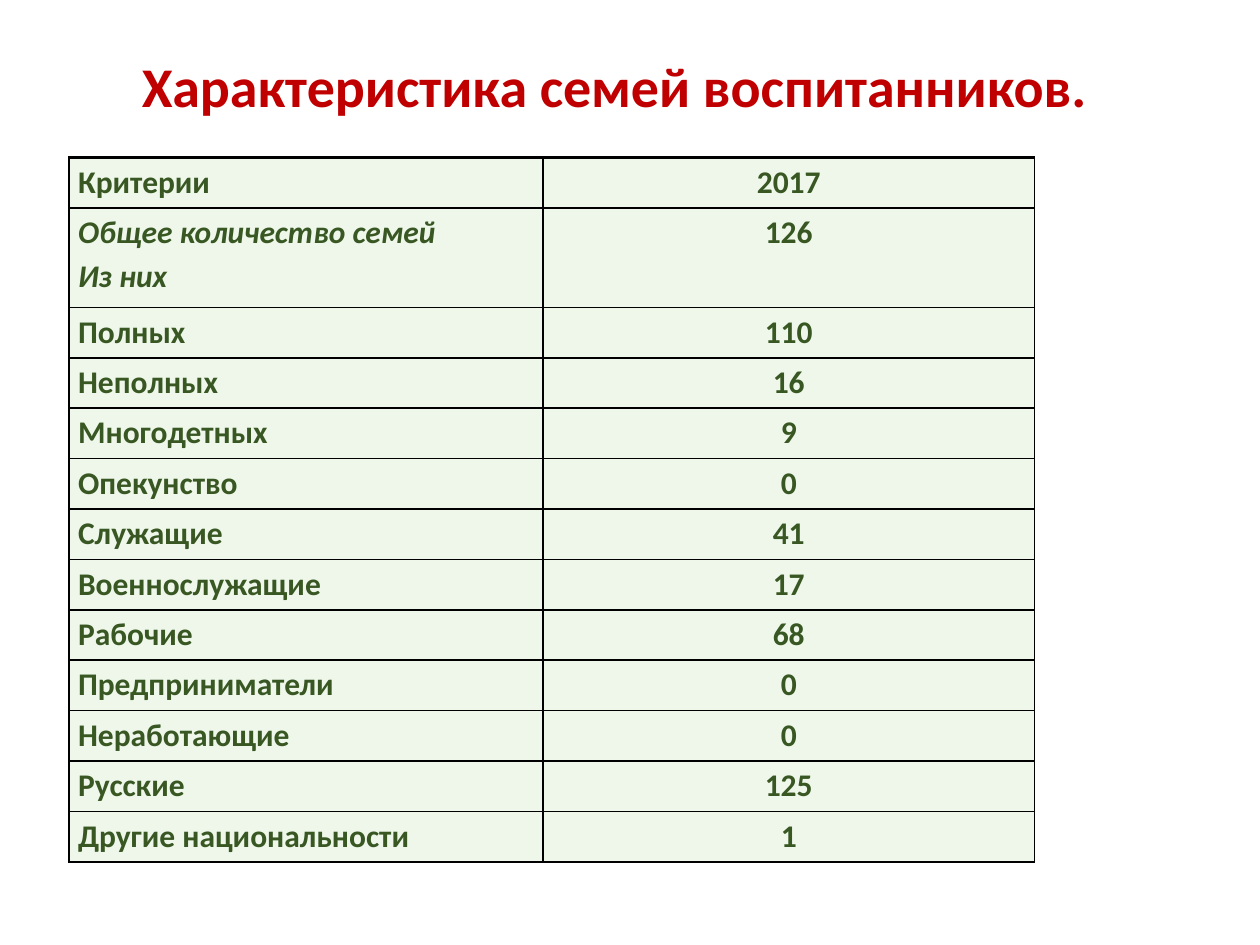
from typing import NamedTuple

from lxml.etree import SubElement
from pptx import Presentation
from pptx.dml.color import RGBColor
from pptx.enum.text import MSO_ANCHOR, MSO_AUTO_SIZE, PP_ALIGN
from pptx.oxml.ns import qn
from pptx.util import Inches, Pt


class Row(NamedTuple):
    label: str
    value: str
    height: float = 0.4
    italic: bool = False


ROWS = [
    Row("Критерии", "2017"),
    Row("Общее количество семей\nИз них", "126", 0.79, True),
    Row("Полных", "110"),
    Row("Неполных", "16"),
    Row("Многодетных", "9"),
    Row("Опекунство", "0"),
    Row("Служащие", "41"),
    Row("Военнослужащие", "17"),
    Row("Рабочие", "68"),
    Row("Предприниматели", "0"),
    Row("Неработающие", "0"),
    Row("Русские", "125"),
    Row("Другие национальности", "1"),
]
WIDTHS = [3.76, 3.9]
THICK, THIN = 1.5, 1
# Horizontal lines, counted from the top, that are thick
HEAVY = {0, 1, 6, len(ROWS)}
GREEN, PALE, RED, BLACK = "385723", "EEF7E9", "C00000", "000000"
CELL = {
    "margin_left": Inches(0.07),
    "margin_right": Inches(0.07),
    "margin_top": 0,
    "margin_bottom": 0,
    "vertical_anchor": MSO_ANCHOR.TOP,
}


def paint(target, color: str) -> None:
    target.rgb = RGBColor.from_string(color)


def apply(target, values: dict) -> None:
    for name, value in values.items():
        setattr(target, name, value)


def style(para, size: float, color: str, align, italic: bool = False) -> None:
    para.alignment = align
    for run in para.runs:
        apply(run.font, {"name": "Calibri", "size": Pt(size),
                         "bold": True, "italic": italic})
        paint(run.font.color, color)


def edge(cell, side: str, width: float) -> None:
    """Draw one cell border; side is L, R, T or B."""
    props = cell._tc.get_or_add_tcPr()
    line = SubElement(props, qn(f"a:ln{side}"), w=str(Pt(width)))
    fill = SubElement(line, qn("a:solidFill"))
    SubElement(fill, qn("a:srgbClr"), val=BLACK)


def weight(line: int) -> float:
    return THICK if line in HEAVY else THIN


def fill_cell(cell, text: str, row: int, col: int, italic: bool) -> None:
    apply(cell, CELL)
    right = THIN if col else THICK
    for side, width in {"L": THICK, "R": right, "T": weight(row),
                        "B": weight(row + 1)}.items():
        edge(cell, side, width)
    cell.fill.solid()
    paint(cell.fill.fore_color, PALE)
    cell.text = text
    for para in cell.text_frame.paragraphs:
        para.line_spacing = 1.15
        style(para, 18, GREEN, PP_ALIGN.CENTER if col else PP_ALIGN.LEFT, italic)


def add_title(slide, text: str) -> None:
    title = slide.shapes.title
    apply(title, {"left": Inches(0.43), "top": Inches(0.36),
                  "width": Inches(8.9), "height": Inches(0.64)})
    frame = title.text_frame
    frame.text = text
    apply(frame, {"word_wrap": True, "vertical_anchor": MSO_ANCHOR.TOP,
                  "auto_size": MSO_AUTO_SIZE.SHAPE_TO_FIT_TEXT})
    style(frame.paragraphs[0], 32, RED, PP_ALIGN.CENTER)


def add_grid(slide, rows: list[Row]) -> None:
    table = slide.shapes.add_table(
        len(rows), len(WIDTHS), Inches(0.55), Inches(1.25),
        Inches(sum(WIDTHS)), Inches(sum(row.height for row in rows))).table
    apply(table, {"first_row": False, "horz_banding": False})
    for col, width in enumerate(WIDTHS):
        table.columns[col].width = Inches(width)
    for num, row in enumerate(rows):
        table.rows[num].height = Inches(row.height)
        fill_cell(table.cell(num, 0), row.label, num, 0, row.italic)
        fill_cell(table.cell(num, 1), row.value, num, 1, False)


def main() -> None:
    deck = Presentation()
    apply(deck, {"slide_width": Inches(10), "slide_height": Inches(7.5)})
    slide = deck.slides.add_slide(deck.slide_layouts[5])
    add_title(slide, "Характеристика семей воспитанников.")
    add_grid(slide, ROWS)
    deck.save("out.pptx")


if __name__ == "__main__":
    main()
